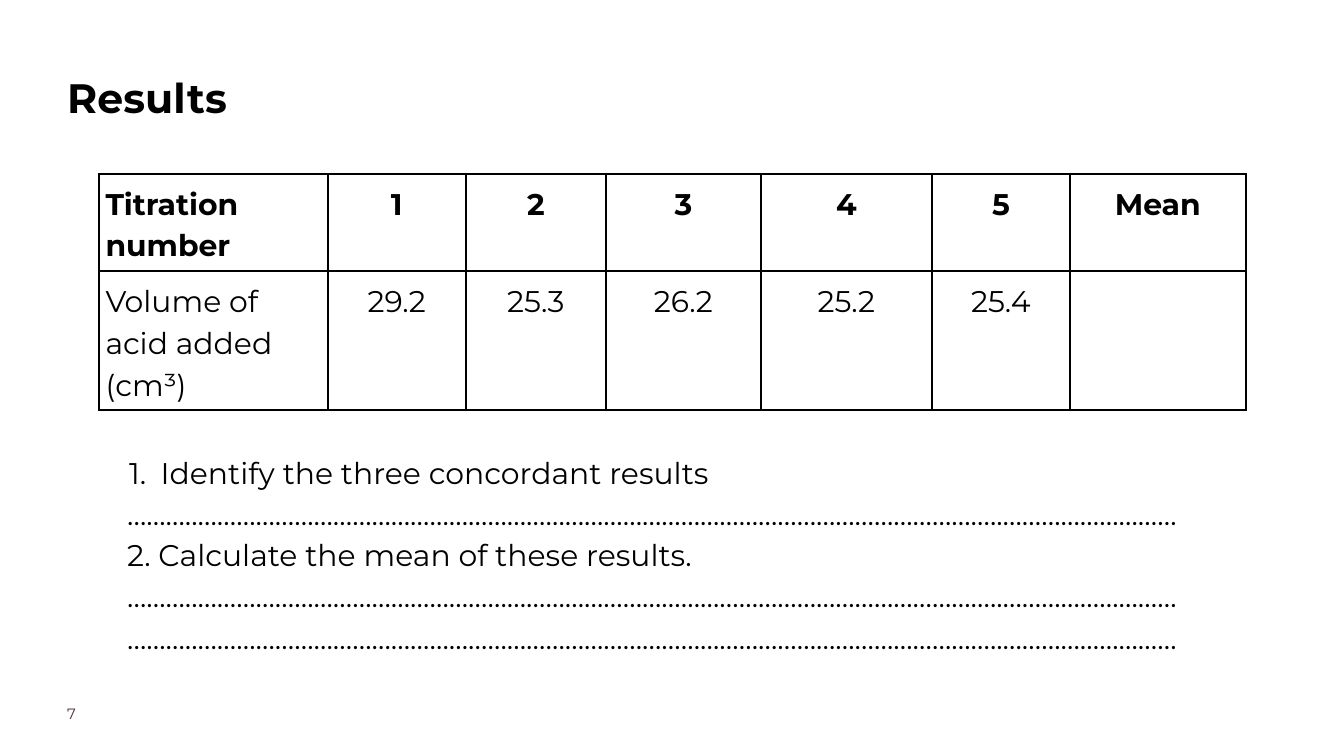
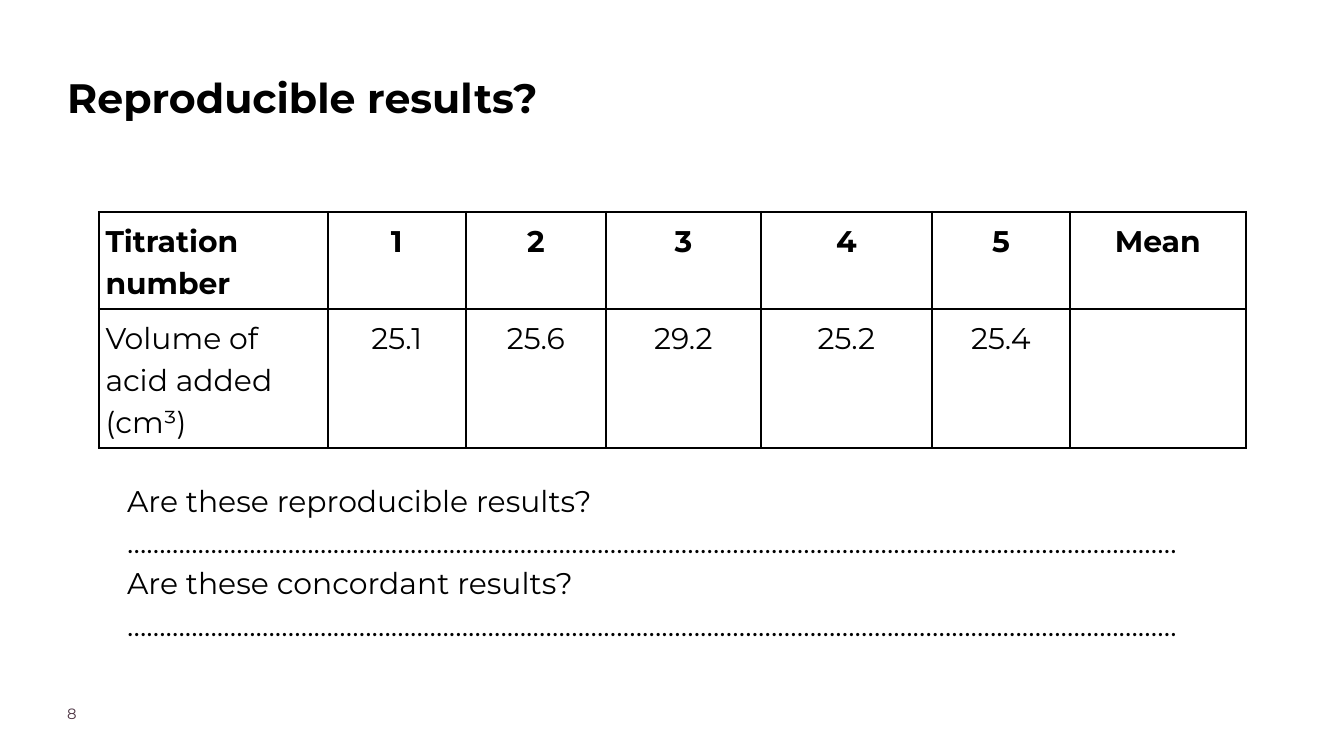
from lxml import etree
from pptx import Presentation
from pptx.dml.color import RGBColor
from pptx.enum.text import MSO_ANCHOR as Anchor, MSO_AUTO_SIZE as AutoSize, PP_ALIGN as Align
from pptx.oxml.ns import qn
from pptx.util import Pt

COLORS = {"text": "000000", "number": "4B3241"}
FONT = "Montserrat"
TITLE_AND_CONTENT = 1
BODY_SIZE = 32
LOOSE = 1.15
CELL_INSET = 7.2
TABLE_LEFT = 105.84
COLUMN_WIDTHS = [245.5, 147.6, 150.5, 165.6, 183.6, 147.6, 188.6]
ROW_HEIGHTS = [58.3, 87.8]
HEADINGS = ["Titration number", "1", "2", "3", "4", "5", "Mean"]
VOLUME_LABEL = "Volume of acid added (cm³)"
ANSWER_LINE = "………..……………………………………………………………………………………………………………..………………………"


def write(para, text, size=BODY_SIZE, color="text", bold=False, align=Align.LEFT, spacing=LOOSE):
    para.alignment = align
    para.line_spacing = spacing
    para.space_before = Pt(0)
    span = para.add_run()
    span.text = text
    span.font.name = FONT
    span.font.size = Pt(size)
    span.font.bold = bold
    span.font.color.rgb = RGBColor.from_string(COLORS[color])


def set_bullet(para, numbered=False):
    props = para._p.get_or_add_pPr()
    props.set("marL", str(Pt(36 if numbered else 0)))
    props.set("indent", str(Pt(-33.84 if numbered else 0)))
    if numbered:
        paint = etree.SubElement(props, qn("a:buClr"))
        etree.SubElement(paint, qn("a:srgbClr"), val=COLORS["text"])
        etree.SubElement(props, qn("a:buFont"), typeface=FONT)
        etree.SubElement(props, qn("a:buAutoNum"), type="arabicPeriod")
    else:
        etree.SubElement(props, qn("a:buNone"))


def prepare(box, left, top, width, height, inset=0):
    box.left, box.top, box.width, box.height = Pt(left), Pt(top), Pt(width), Pt(height)
    frame = box.text_frame
    frame.word_wrap = True
    frame.auto_size = AutoSize.NONE
    frame.vertical_anchor = Anchor.TOP
    frame.margin_left = frame.margin_right = Pt(inset)
    frame.margin_top = frame.margin_bottom = Pt(inset)
    return frame


def add_page(deck, title, number):
    page = deck.slides.add_slide(deck.slide_layouts[TITLE_AND_CONTENT])
    heading = prepare(page.shapes.title, 72, 69.84, 1039.68, 128.16)
    write(heading.paragraphs[0], title, size=44, bold=True)
    box = page.shapes.add_textbox(0, 0, 0, 0)
    footer = prepare(box, 72, 754.56, 113.04, 28.08)
    write(footer.paragraphs[0], number, size=16, color="number", spacing=1.0)
    return page


def add_questions(page, top, questions, numbered=False):
    frame = prepare(page.placeholders[1], 128.88, top, 1155.6, 134.64, inset=CELL_INSET)
    for index, text in enumerate(questions):
        para = frame.add_paragraph() if index else frame.paragraphs[0]
        set_bullet(para, numbered and index == 0)
        write(para, text, spacing=LOOSE if index else 1.0)


def style_cell(cell):
    cell.margin_left = cell.margin_right = Pt(CELL_INSET)
    cell.margin_top = cell.margin_bottom = Pt(CELL_INSET)
    props = cell._tc.get_or_add_tcPr()
    for side in ("lnL", "lnR", "lnT", "lnB"):
        border = etree.SubElement(props, qn(f"a:{side}"), w=str(Pt(2.25)))
        fill = etree.SubElement(border, qn("a:solidFill"))
        etree.SubElement(fill, qn("a:srgbClr"), val=COLORS["text"])
    cell.fill.background()


def add_titration_table(page, top, volumes):
    rows = [HEADINGS, [VOLUME_LABEL, *volumes, ""]]
    frame = page.shapes.add_table(len(rows), len(HEADINGS), Pt(TABLE_LEFT), Pt(top),
                                  Pt(sum(COLUMN_WIDTHS)), Pt(sum(ROW_HEIGHTS)))
    table = frame.table
    table.first_row = table.horz_banding = False
    for column, width in zip(table.columns, COLUMN_WIDTHS):
        column.width = Pt(width)
    for row, height in zip(table.rows, ROW_HEIGHTS):
        row.height = Pt(height)
    for row_index, texts in enumerate(rows):
        for column_index, text in enumerate(texts):
            cell = table.cell(row_index, column_index)
            style_cell(cell)
            if text:
                write(cell.text_frame.paragraphs[0], text, bold=row_index == 0,
                      align=Align.CENTER if column_index else Align.LEFT)


def main():
    deck = Presentation()
    deck.slide_width, deck.slide_height = Pt(1440), Pt(810)

    results = add_page(deck, "Results", "7")
    add_titration_table(results, 186.48, ["29.2", "25.3", "26.2", "25.2", "25.4"])
    add_questions(results, 479.52, [
        "Identify the three concordant results", ANSWER_LINE,
        "2. Calculate the mean of these results.", ANSWER_LINE, ANSWER_LINE,
    ], numbered=True)

    reproducible = add_page(deck, "Reproducible results?", "8")
    add_titration_table(reproducible, 226.8, ["25.1", "25.6", "29.2", "25.2", "25.4"])
    add_questions(reproducible, 509.76, [
        "Are these reproducible results?", ANSWER_LINE,
        "Are these concordant results?", ANSWER_LINE,
    ])

    deck.save("out.pptx")


if __name__ == "__main__":
    main()
